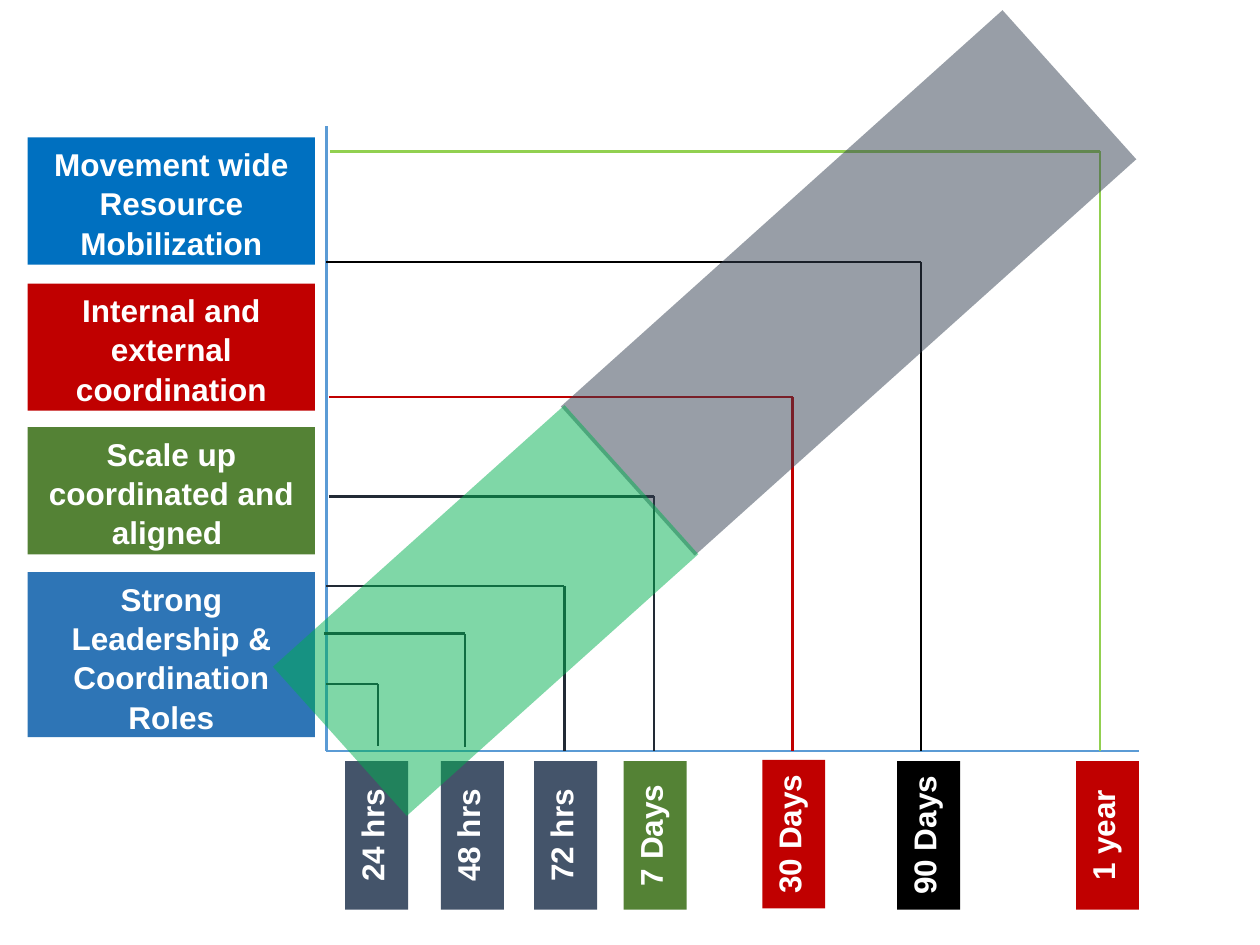
from dataclasses import dataclass

from lxml import etree
from pptx import Presentation
from pptx.dml.color import RGBColor
from pptx.enum.shapes import MSO_CONNECTOR, MSO_SHAPE
from pptx.enum.text import MSO_ANCHOR, PP_ALIGN
from pptx.oxml.ns import qn
from pptx.util import Inches, Pt

RECTANGLE = MSO_SHAPE.RECTANGLE
STRAIGHT = MSO_CONNECTOR.STRAIGHT
TOP = MSO_ANCHOR.TOP
CENTER = PP_ALIGN.CENTER

# The slide is a grid of 100 columns by 75 rows with square cells
COLUMNS, ROWS = 100, 75
CELL = Inches(0.1)

COLORS = {
    "white": "FFFFFF",
    "axis": "5B9BD5",
    "slate": "44546A",
    "ink": "222A35",
    "green": "548235",
    "lime": "92D050",
    "red": "C00000",
    "black": "000000",
    "blue": "0070C0",
    "steel": "2E75B6",
    "charcoal": "333F50",
    "emerald": "00B050",
}

AXIS_COL, AXIS_ROW = 25.9, 59.6
GOAL_COL, GOAL_WIDTH = 2.2, 22.8
PERIOD_WIDTH, PERIOD_HEIGHT = 5, 11.8
PERIOD_ROW = 60.4


@dataclass(frozen=True)
class Goal:
    text: str
    row: float
    height: float
    color: str


@dataclass(frozen=True)
class Milestone:
    period: str
    label_col: float
    label_color: str
    line_color: str
    start_col: float
    corner_col: float
    corner_row: float
    end_row: float = AXIS_ROW
    label_row: float = PERIOD_ROW


@dataclass(frozen=True)
class Band:
    col: float
    row: float
    width: float
    height: float
    color: str


GOALS = [
    Goal("Movement wide Resource Mobilization", 10.9, 10.1, "blue"),
    Goal("Internal and external coordination", 22.5, 10.1, "red"),
    Goal("Scale up coordinated and aligned ", 33.9, 10.1, "green"),
    Goal("Strong Leadership & Coordination Roles", 45.4, 13.1, "steel"),
]

MILESTONES = [
    Milestone("24 hrs", 27.4, "slate", "ink", 25.9, 30, 54.3, end_row=59.2),
    Milestone("48 hrs", 35, "slate", "ink", 25.7, 36.9, 50.3, end_row=59.3),
    Milestone("72 hrs", 42.4, "slate", "ink", 25.9, 44.8, 46.5),
    Milestone("7 Days", 49.5, "green", "ink", 26.1, 51.9, 39.4),
    Milestone("30 Days", 60.5, "red", "red", 26.1, 62.9, 31.5, label_row=60.3),
    Milestone("90 Days", 71.2, "black", "black", 25.9, 73.1, 20.8),
    Milestone("1 year", 85.4, "red", "lime", 26.2, 87.3, 12),
]

BANDS = [
    Band(43.8, 14.5, 47.1, 15.9, "charcoal"),
    Band(23, 40.5, 31.1, 15.9, "emerald"),
]
BAND_ANGLE = 318.1
BAND_ALPHA = 50


def cells(count: float) -> int:
    return round(count * CELL)


def rgb(color: str) -> RGBColor:
    return RGBColor.from_string(COLORS[color])


def add_box(slide, col: float, row: float, width: float, height: float, color: str):
    box = slide.shapes.add_shape(
        RECTANGLE, cells(col), cells(row), cells(width), cells(height))
    box.shadow.inherit = False
    box.fill.solid()
    box.fill.fore_color.rgb = rgb(color)
    box.line.fill.background()
    return box


def add_label(box, text: str, upright: bool = False) -> None:
    frame = box.text_frame
    frame.text = text
    frame.word_wrap = True
    frame.vertical_anchor = TOP
    if upright:
        frame._txBody.bodyPr.set("vert", "vert270")
    paragraph = frame.paragraphs[0]
    paragraph.alignment = CENTER
    paragraph.line_spacing = 1.04
    font = paragraph.runs[0].font
    font.name, font.size, font.bold = "Arial", Pt(18), True
    font.color.rgb = rgb("white")


def add_line(slide, start: tuple[float, float], end: tuple[float, float],
             color: str, weight: float = 1.5) -> None:
    line = slide.shapes.add_connector(
        STRAIGHT, *(cells(value) for value in (*start, *end)))
    line.line.color.rgb = rgb(color)
    line.line.width = Pt(weight)
    etree.SubElement(line._element.spPr, qn("a:effectLst"))


def add_milestone_lines(slide, milestone: Milestone) -> None:
    corner = (milestone.corner_col, milestone.corner_row)
    add_line(slide, (milestone.start_col, milestone.corner_row), corner,
             milestone.line_color)
    add_line(slide, corner, (milestone.corner_col, milestone.end_row),
             milestone.line_color)


def add_band(slide, band: Band) -> None:
    box = add_box(slide, band.col, band.row, band.width, band.height, band.color)
    box.rotation = BAND_ANGLE
    tint = box._element.spPr.find(qn("a:solidFill"))[0]
    etree.SubElement(tint, qn("a:alpha"), val=str(BAND_ALPHA * 1000))


def main() -> None:
    deck = Presentation()
    deck.slide_width, deck.slide_height = cells(COLUMNS), cells(ROWS)
    slide = deck.slides.add_slide(deck.slide_layouts[6])

    # Axes
    add_line(slide, (AXIS_COL, 10), (AXIS_COL, AXIS_ROW), "axis")
    add_line(slide, (AXIS_COL, AXIS_ROW), (90.4, AXIS_ROW), "axis", 1)

    # Periods along the time axis
    for milestone in MILESTONES:
        box = add_box(slide, milestone.label_col, milestone.label_row,
                      PERIOD_WIDTH, PERIOD_HEIGHT, milestone.label_color)
        add_label(box, milestone.period, upright=True)

    # Goals beside the vertical axis
    for goal in GOALS:
        box = add_box(slide, GOAL_COL, goal.row, GOAL_WIDTH, goal.height, goal.color)
        add_label(box, goal.text)

    # Lines linking goals to periods
    for milestone in MILESTONES:
        add_milestone_lines(slide, milestone)

    # Translucent diagonal bands
    for band in BANDS:
        add_band(slide, band)

    deck.save("out.pptx")


if __name__ == "__main__":
    main()
